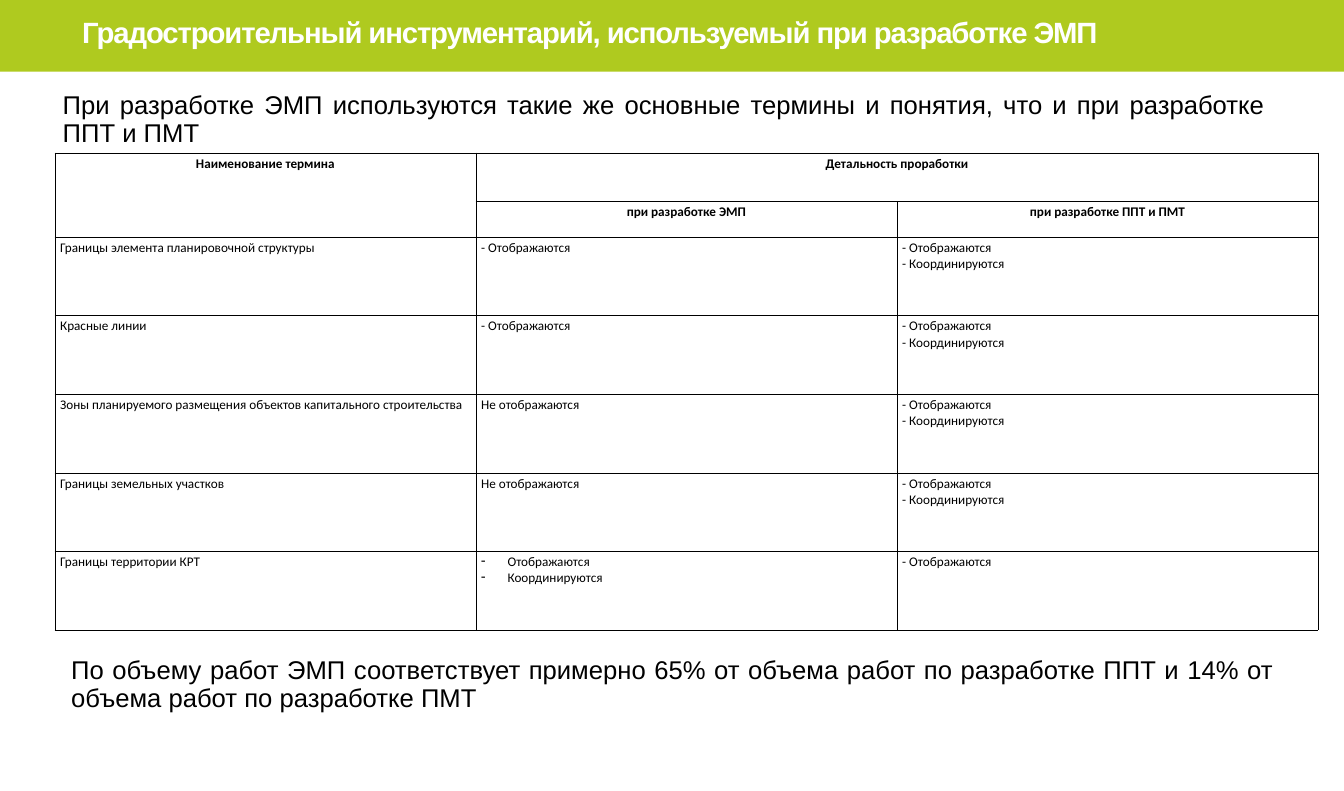
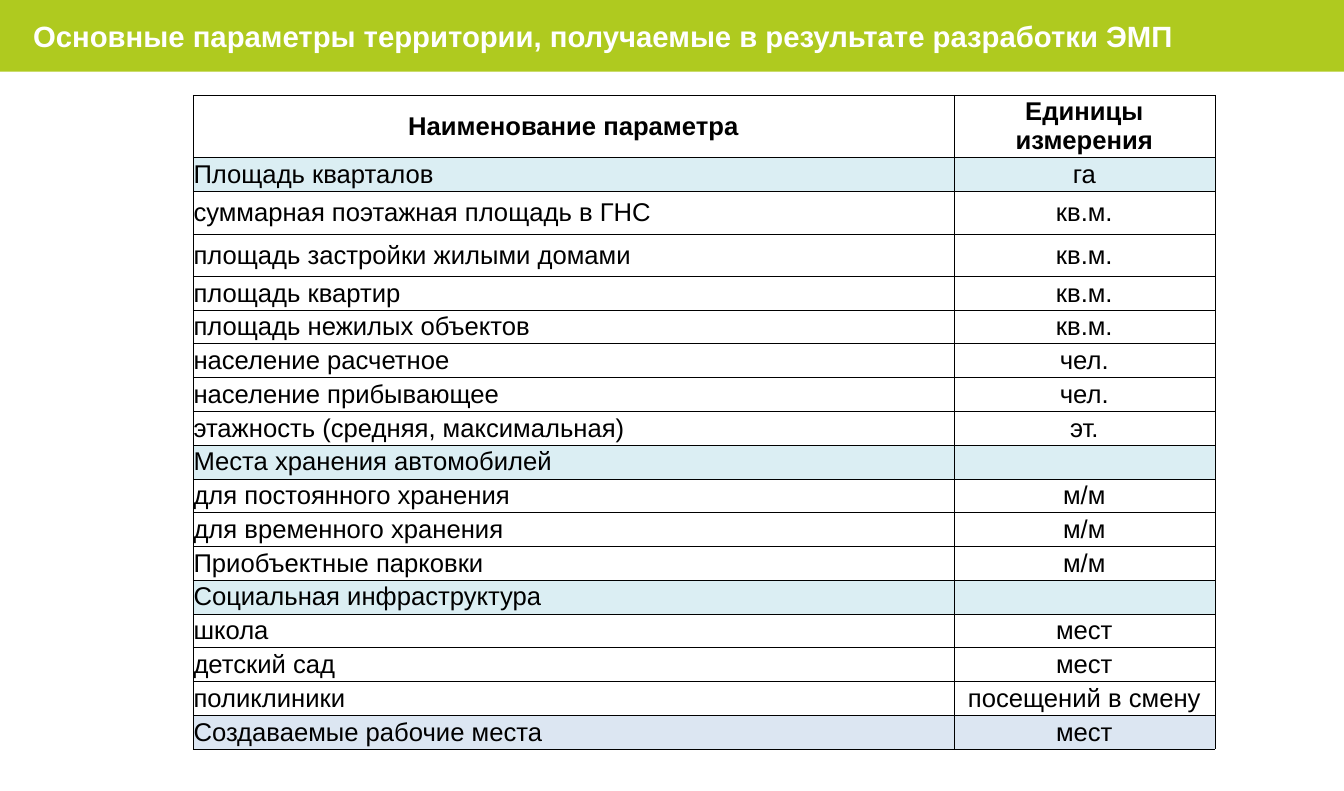
from dataclasses import dataclass

from lxml.etree import SubElement
from pptx import Presentation
from pptx.dml.color import RGBColor
from pptx.enum.shapes import MSO_SHAPE
from pptx.enum.text import MSO_ANCHOR, PP_ALIGN
from pptx.oxml.ns import qn
from pptx.util import Inches, Pt


@dataclass(frozen=True)
class Theme:
    """Colours, fonts and type sizes shared by the slides."""

    band: str = "AFCA1F"
    title: str = "FFFFFF"
    ink: str = "000000"
    section: str = "DBEEF3"
    jobs: str = "DCE6F2"
    font: str = "Arial"
    terms_font: str = "Calibri"
    title_size: int = 40
    body_size: int = 35
    terms_size: int = 18


class Deck:
    """Draws on the current slide, on a grid of 100 columns by 100 rows."""

    def __init__(self, theme, width, height):
        self.theme = theme
        self.presentation = Presentation()
        self.presentation.slide_width = Inches(width)
        self.presentation.slide_height = Inches(height)
        self.slide = None

    def columns(self, count):
        """Turn grid columns into a length."""
        return round(self.presentation.slide_width * count / 100)

    def rows(self, count):
        """Turn grid rows into a length."""
        return round(self.presentation.slide_height * count / 100)

    def area(self, left, top, width, height):
        """Turn a grid area into slide lengths."""
        return self.columns(left), self.rows(top), self.columns(width), self.rows(height)

    def style(self, paragraph, size, color=None, bold=False, font=None, align=PP_ALIGN.LEFT):
        """Set the type and alignment of a paragraph."""
        paragraph.alignment = align
        paragraph.font.name = font or self.theme.font
        paragraph.font.size = Pt(size)
        paragraph.font.bold = bold
        paragraph.font.color.rgb = RGBColor.from_string(color or self.theme.ink)

    def text(self, words, *area):
        """Add a text box without insets and return its paragraph."""
        frame = self.slide.shapes.add_textbox(*self.area(*area)).text_frame
        frame.word_wrap = True
        frame.margin_left = frame.margin_right = frame.margin_top = frame.margin_bottom = 0
        frame.text = words
        return frame.paragraphs[0]

    def titled_slide(self, title, left, top, space_before=0, tracking=0):
        """Start a slide with the green band and its title."""
        self.slide = self.presentation.slides.add_slide(self.presentation.slide_layouts[6])
        band = self.slide.shapes.add_shape(MSO_SHAPE.RECTANGLE, *self.area(0, 0, 100, 9.07))
        band.shadow.inherit = False
        band.fill.solid()
        band.fill.fore_color.rgb = RGBColor.from_string(self.theme.band)
        band.line.fill.background()
        heading = self.text(title, left, top, 99.6 - left, 7)
        self.style(heading, self.theme.title_size, self.theme.title, bold=True)
        heading.space_before = Pt(space_before)
        if tracking:
            heading.runs[0].font._element.set("spc", str(round(tracking * 100)))

    def statement(self, words, left, top):
        """Add a justified statement."""
        paragraph = self.text(words, left, top, 89.6, 6.53)
        self.style(paragraph, self.theme.body_size, align=PP_ALIGN.JUSTIFY)
        paragraph.line_spacing = 0.9
        paragraph.space_before = paragraph.space_after = Pt(5)
        paragraph._p.get_or_add_pPr().set("marL", str(Inches(0.03)))

    def table(self, records, left, top, widths, heights):
        """Add a plain table filled with the records."""
        area = self.area(left, top, sum(widths), sum(heights))
        table = self.slide.shapes.add_table(len(records), len(widths), *area).table
        table.first_row = table.horz_banding = False
        for column, width in zip(table.columns, widths):
            column.width = self.columns(width)
        for row, height, record in zip(table.rows, heights, records):
            row.height = self.rows(height)
            for cell, words in zip(row.cells, record):
                cell.text = words
        return table

    def cell(self, cell, line_width, fill=None, **type_style):
        """Set the borders, fill and type of a table cell."""
        properties = cell._tc.get_or_add_tcPr()
        for side in ("lnL", "lnR", "lnT", "lnB"):
            border = SubElement(properties, qn(f"a:{side}"), w=str(Pt(line_width)))
            paint = SubElement(border, qn("a:solidFill"))
            SubElement(paint, qn("a:srgbClr"), val=self.theme.ink)
        if fill:
            cell.fill.solid()
            cell.fill.fore_color.rgb = RGBColor.from_string(fill)
        else:
            cell.fill.background()
        for paragraph in cell.text_frame.paragraphs:
            self.style(paragraph, **type_style)

    def dash_list(self, cell):
        """Turn the paragraphs of a cell into a list with dashes."""
        for paragraph in cell.text_frame.paragraphs:
            properties = paragraph._p.get_or_add_pPr()
            properties.set("marL", str(Inches(0.5)))
            properties.set("indent", str(-Inches(0.5)))
            dash = properties.makeelement(qn("a:buChar"), {"char": "-"})
            properties.find(qn("a:defRPr")).addprevious(dash)


SHOWN = "- Отображаются"
LOCATED = "- Отображаются\n- Координируются"
HIDDEN = "Не отображаются"
TERMS = [
    ("Наименование термина", "Детальность проработки", ""),
    ("", "при разработке ЭМП", "при разработке ППТ и ПМТ"),
    ("Границы элемента планировочной структуры", SHOWN, LOCATED),
    ("Красные линии", SHOWN, LOCATED),
    ("Зоны планируемого размещения объектов капитального строительства", HIDDEN, LOCATED),
    ("Границы земельных участков", HIDDEN, LOCATED),
    ("Границы территории КРТ", "Отображаются\nКоординируются", SHOWN),
]
PARAMETERS = [
    ("Наименование параметра", "Единицы измерения"),
    ("Площадь кварталов", "га"),
    ("суммарная поэтажная площадь в ГНС", "кв.м."),
    ("площадь застройки жилыми домами", "кв.м."),
    ("площадь квартир", "кв.м."),
    ("площадь нежилых объектов", "кв.м."),
    ("население расчетное", "чел."),
    ("население прибывающее", "чел."),
    ("этажность (средняя, максимальная)", "эт."),
    ("Места хранения автомобилей", ""),
    ("для постоянного хранения", "м/м"),
    ("для временного хранения", "м/м"),
    ("Приобъектные парковки", "м/м"),
    ("Социальная инфраструктура", ""),
    ("школа", "мест"),
    ("детский сад", "мест"),
    ("поликлиники", "посещений в смену"),
    ("Создаваемые рабочие места", "мест"),
]


def add_terms(deck):
    """Build the slide that compares the terms."""
    deck.titled_slide("Градостроительный инструментарий, используемый при разработке ЭМП",
                      6.12, 1.8, tracking=-1.5)
    deck.statement("При разработке ЭМП используются такие же основные термины и понятия, "
                   "что и при разработке ППТ и ПМТ", 4.55, 11.67)
    terms = deck.table(TERMS, 4.08, 19.33, [31.33] * 3, [6.13, 4.53] + [9.93] * 5)
    for index, row in enumerate(terms.rows):
        heading = index < 2
        for cell in row.cells:
            deck.cell(cell, 1, size=deck.theme.terms_size, font=deck.theme.terms_font,
                      bold=heading, align=PP_ALIGN.CENTER if heading else PP_ALIGN.LEFT)
    terms.cell(0, 0).merge(terms.cell(1, 0))
    terms.cell(0, 1).merge(terms.cell(0, 2))
    deck.dash_list(terms.cell(len(TERMS) - 1, 1))
    deck.statement("По объему работ ЭМП соответствует примерно 65% от объема работ "
                   "по разработке ППТ и 14% от объема работ по разработке ПМТ", 5.18, 83.13)


def add_parameters(deck):
    """Build the slide that lists the territory parameters."""
    deck.titled_slide("Основные параметры территории, получаемые в результате разработки ЭМП",
                      2.47, 2.33, space_before=10)
    heights = [6.33, 4.27, 5.53, 5.27] + [4.27] * (len(PARAMETERS) - 4)
    parameters = deck.table(PARAMETERS, 14.36, 12, [56.61, 19.42], heights)
    fills = dict.fromkeys((1, 9, 13), deck.theme.section)
    fills[len(PARAMETERS) - 1] = deck.theme.jobs
    for index, row in enumerate(parameters.rows):
        heading = index == 0
        for column, cell in enumerate(row.cells):
            centred = heading or column == 1
            deck.cell(cell, 0.5, fills.get(index), size=deck.theme.body_size, bold=heading,
                      align=PP_ALIGN.CENTER if centred else PP_ALIGN.LEFT)
            cell.vertical_anchor = MSO_ANCHOR.MIDDLE
            cell.margin_left = cell.margin_right = cell.margin_top = Inches(0.01)
            cell.margin_bottom = 0


def main():
    """Build and save the presentation."""
    deck = Deck(Theme(), 25.49, 15)
    add_terms(deck)
    add_parameters(deck)
    deck.presentation.save("out.pptx")


if __name__ == "__main__":
    main()
